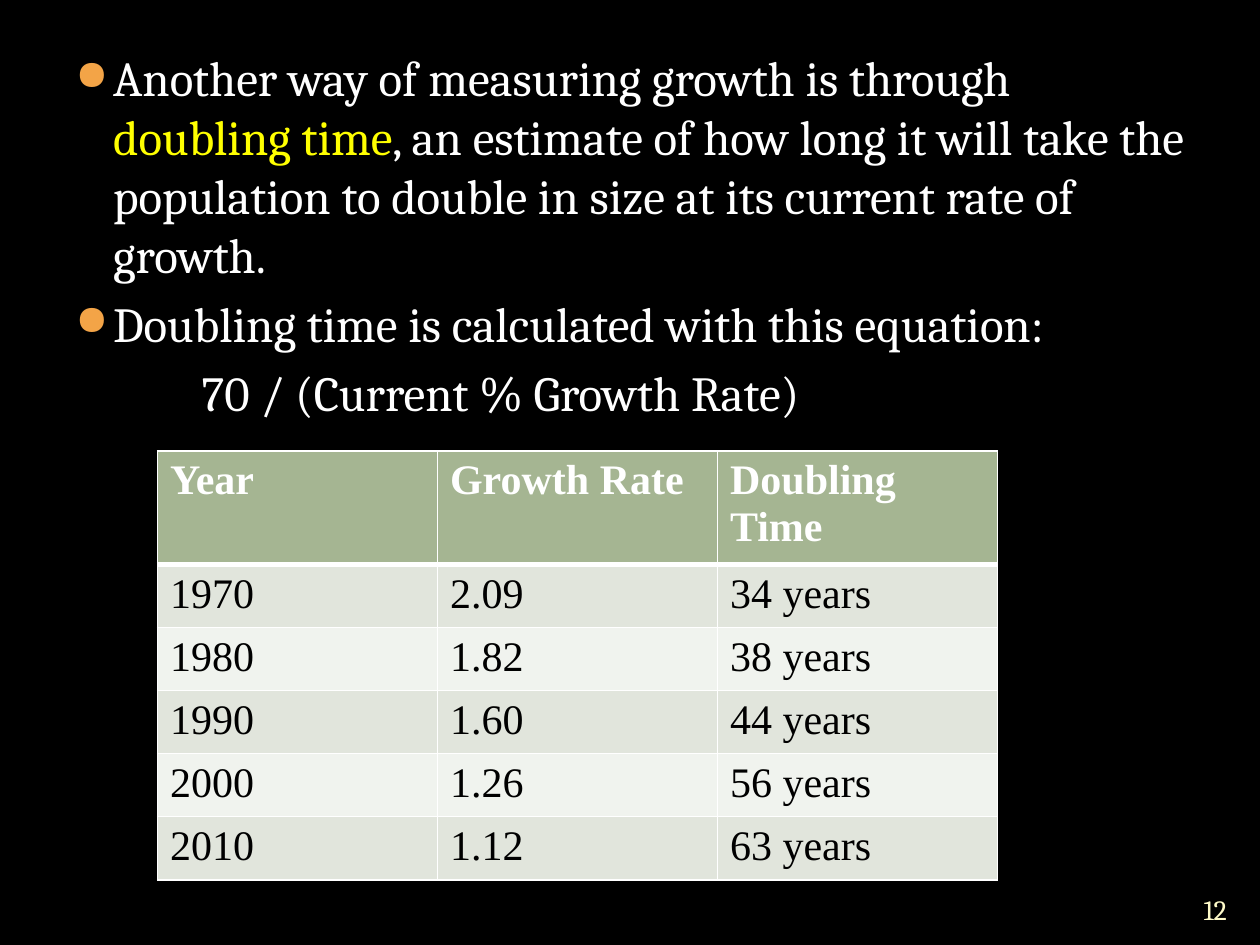
from pptx import Presentation
from pptx.dml.color import RGBColor
from pptx.enum.text import MSO_ANCHOR, PP_ALIGN
from pptx.oxml.ns import qn
from pptx.util import Inches, Pt
from lxml.etree import SubElement

WIDTH, HEIGHT = 10, 7.5
COLORS = {
    "page": "000000", "text": "FFFFFF", "key": "FFFF00", "bullet": "F3A447",
    "number": "FEFAC9", "header": "A5B592", "odd": "E1E5DC", "even": "F0F3EE",
    "cell": "000000", "rule": "FFFFFF",
}
BULLETS = [
    [("Another way of measuring growth is through ", "text"),
     ("doubling time", "key"),
     (", an estimate of how long it will take the population to double "
      "in size at its current rate of growth.", "text")],
    [("Doubling time is calculated with this equation:", "text")],
]
EQUATION = "70 / (Current % Growth Rate)"
GROWTH = [
    ("Year", "Growth Rate", "Doubling Time"),
    ("1970", "2.09", "34 years"),
    ("1980", "1.82", "38 years"),
    ("1990", "1.60", "44 years"),
    ("2000", "1.26", "56 years"),
    ("2010", "1.12", "63 years"),
]


def color(name):
    return RGBColor.from_string(COLORS[name])


def area(left, top, width, height):
    """Turn shares of the slide into lengths."""
    return (Inches(left * WIDTH), Inches(top * HEIGHT),
            Inches(width * WIDTH), Inches(height * HEIGHT))


def add_text(para, text, *, size=28, font="Cambria", fill="text", bold=False):
    span = para.add_run()
    span.text = text
    span.font.size = Pt(size)
    span.font.name = font
    span.font.bold = bold
    span.font.color.rgb = color(fill)


def indent(para, left, first=0, bullet=None):
    """Set the indents in inches, and a bullet if one is given."""
    props = para._p.get_or_add_pPr()
    props.set("marL", str(Inches(left)))
    props.set("indent", str(Inches(first)))
    if bullet:
        tint = SubElement(props, qn("a:buClr"))
        SubElement(tint, qn("a:srgbClr"), val=COLORS["bullet"])
        SubElement(props, qn("a:buSzPct"), val="85000")
        SubElement(props, qn("a:buChar"), char=bullet)


def add_explanation(page, box):
    frame = page.shapes.add_textbox(*box).text_frame
    frame.word_wrap = True
    for number, spans in enumerate(BULLETS + [[(EQUATION, "text")]]):
        para = frame.paragraphs[0] if number == 0 else frame.add_paragraph()
        para.space_before = Pt(6)
        if number < len(BULLETS):
            indent(para, 0.3, -0.3, "●")
        else:
            indent(para, 1)
        for text, fill in spans:
            add_text(para, text, fill=fill)


def add_borders(cell, bottom):
    props = cell._tc.get_or_add_tcPr()
    for side, width in (("L", 1), ("R", 1), ("T", 1), ("B", bottom)):
        line = SubElement(props, qn(f"a:ln{side}"), w=str(Pt(width)))
        paint = SubElement(line, qn("a:solidFill"))
        SubElement(paint, qn("a:srgbClr"), val=COLORS["rule"])


def add_growth_table(page, box):
    table = page.shapes.add_table(len(GROWTH), len(GROWTH[0]), *box).table
    for r, row in enumerate(GROWTH):
        header = r == 0
        band = "header" if header else ("even", "odd")[r % 2]
        for c, text in enumerate(row):
            cell = table.cell(r, c)
            # The thick rule under the header is also the top of the next row
            add_borders(cell, bottom=3 if header else 1)
            if r == 1:
                cell._tc.tcPr.find(qn("a:lnT")).set("w", str(Pt(3)))
            cell.fill.solid()
            cell.fill.fore_color.rgb = color(band)
            add_text(cell.text_frame.paragraphs[0], text, size=24,
                     font="Times New Roman", bold=header,
                     fill="text" if header else "cell")


def add_page_number(page, box, number):
    frame = page.shapes.add_textbox(*box).text_frame
    frame.word_wrap = True
    frame.vertical_anchor = MSO_ANCHOR.MIDDLE
    frame.margin_left = frame.margin_right = 0
    frame.margin_top = frame.margin_bottom = 0
    para = frame.paragraphs[0]
    para.alignment = PP_ALIGN.CENTER
    add_text(para, number, size=16, fill="number")


def main():
    deck = Presentation()
    deck.slide_width, deck.slide_height = Inches(WIDTH), Inches(HEIGHT)
    page = deck.slides.add_slide(deck.slide_layouts[6])
    page.background.fill.solid()
    page.background.fill.fore_color.rgb = color("page")

    add_explanation(page, area(0.05, 0.33 / HEIGHT, 0.9, 6.33 / HEIGHT))
    add_page_number(page, area(0.931, 6.97 / HEIGHT, 0.067, 0.5 / HEIGHT), "12")
    # Rows start at 0.41 inches and grow to fit their text
    add_growth_table(page, area(0.125, 3.58 / HEIGHT, 2 / 3,
                                0.41 * len(GROWTH) / HEIGHT))
    deck.save("out.pptx")


if __name__ == "__main__":
    main()
